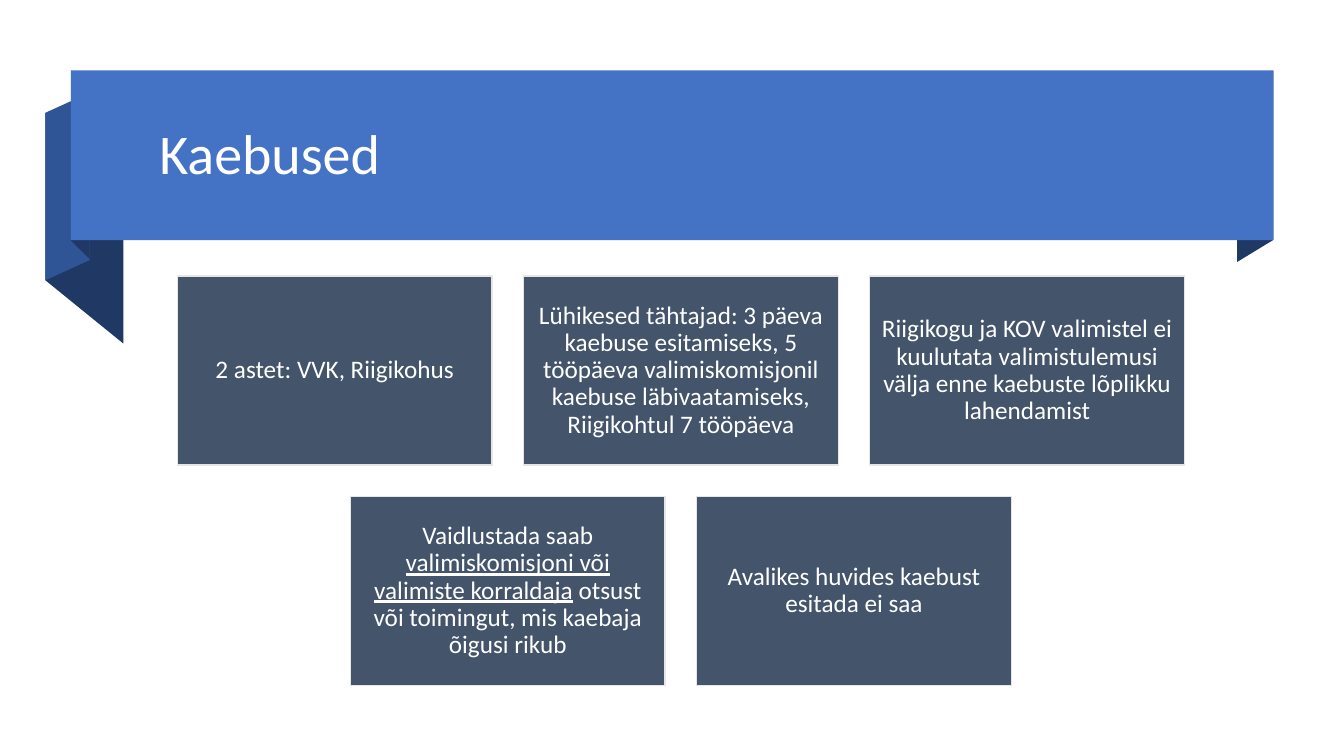
"""Build the slide about election complaints: a ribbon title above five cards."""
from dataclasses import dataclass

from pptx import Presentation
from pptx.dml.color import RGBColor
from pptx.enum.shapes import MSO_SHAPE
from pptx.enum.text import MSO_ANCHOR, MSO_AUTO_SIZE, PP_ALIGN
from pptx.shapes.autoshape import Shape
from pptx.slide import Slide
from pptx.text.text import TextFrame
from pptx.util import Pt


@dataclass(frozen=True)
class Theme:
    ribbon: RGBColor = RGBColor(0x44, 0x72, 0xC4)
    fold: RGBColor = RGBColor(0x2F, 0x55, 0x97)
    shade: RGBColor = RGBColor(0x20, 0x38, 0x64)
    card: RGBColor = RGBColor(0x44, 0x54, 0x6A)
    card_border: RGBColor = RGBColor(0xE7, 0xE6, 0xE6)
    text: RGBColor = RGBColor(0xFF, 0xFF, 0xFF)
    font: str = "Calibri"
    title_size: float = 40
    card_size: float = 18


@dataclass(frozen=True)
class RibbonFold:
    points: tuple[tuple[float, float], ...]
    color: RGBColor


@dataclass(frozen=True)
class TextRun:
    text: str
    underline: bool = False


@dataclass(frozen=True)
class Card:
    runs: tuple[TextRun, ...]


THEME = Theme()
SLIDE_WIDTH, SLIDE_HEIGHT = 960, 540
CARD_WIDTH, CARD_HEIGHT, CARD_GAP = 224.8, 134.9, 22.5
CARDS_CENTER, CARDS_TOP = 486.4, 197.2
CARD_INSET = 5.4

FOLDS = (
    RibbonFold(((909.6, 171.4), (883.6, 187.2), (883.6, 65.5), (909.6, 50.4)), THEME.shade),
    RibbonFold(((88.2, 245.5), (32.4, 200.2), (32.4, 80.6), (88.2, 126)), THEME.shade),
    RibbonFold(((64.1, 185.8), (32.4, 200.2), (32.4, 80.6), (64.1, 66.2)), THEME.fold),
    RibbonFold(((64.1, 185.0), (50.8, 172.1), (50.8, 50.4), (64.1, 64.1)), THEME.shade),
)

CARD_ROWS = (
    (
        Card((TextRun("2 astet: VVK, Riigikohus"),)),
        Card((TextRun(
            "Lühikesed tähtajad: 3 päeva kaebuse esitamiseks, 5 tööpäeva "
            "valimiskomisjonil kaebuse läbivaatamiseks, Riigikohtul 7 tööpäeva"
        ),)),
        Card((TextRun(
            "Riigikogu ja KOV valimistel ei kuulutata valimistulemusi välja "
            "enne kaebuste lõplikku lahendamist"
        ),)),
    ),
    (
        Card((
            TextRun("Vaidlustada saab "),
            TextRun("valimiskomisjoni või valimiste korraldaja", underline=True),
            TextRun(" otsust või toimingut, mis kaebaja õigusi rikub"),
        )),
        Card((TextRun("Avalikes huvides kaebust esitada ei saa"),)),
    ),
)


def fill_shape(shape: Shape, color: RGBColor) -> None:
    shape.shadow.inherit = False
    shape.fill.solid()
    shape.fill.fore_color.rgb = color
    shape.line.fill.background()


def write_text(
    frame: TextFrame, runs: tuple[TextRun, ...], size: float, alignment: PP_ALIGN
) -> None:
    frame.word_wrap = True
    frame.auto_size = MSO_AUTO_SIZE.NONE
    frame.vertical_anchor = MSO_ANCHOR.MIDDLE
    paragraph = frame.paragraphs[0]
    paragraph.alignment = alignment
    paragraph.line_spacing = 0.9
    for text_run in runs:
        run = paragraph.add_run()
        run.text = text_run.text
        run.font.name = THEME.font
        run.font.size = Pt(size)
        run.font.color.rgb = THEME.text
        if text_run.underline:
            run.font.underline = True


def draw_fold(slide: Slide, fold: RibbonFold) -> None:
    start, *others = [(Pt(x), Pt(y)) for x, y in fold.points]
    builder = slide.shapes.build_freeform(*start)
    builder.add_line_segments(others, close=True)
    fill_shape(builder.convert_to_shape(), fold.color)


def draw_ribbon(slide: Slide) -> None:
    for fold in FOLDS:
        draw_fold(slide, fold)
    band = slide.shapes.add_shape(
        MSO_SHAPE.RECTANGLE, Pt(50.6), Pt(50.2), Pt(859), Pt(121.4)
    )
    fill_shape(band, THEME.ribbon)


def place_title(slide: Slide, text: str) -> None:
    title = slide.shapes.title
    title.left, title.top, title.width, title.height = Pt(106.6), Pt(59.8), Pt(787.7), Pt(104.4)
    write_text(title.text_frame, (TextRun(text),), THEME.title_size, PP_ALIGN.LEFT)
    title.element.getparent().append(title.element)


def draw_card(slide: Slide, card: Card, left: float, top: float) -> None:
    shape = slide.shapes.add_shape(
        MSO_SHAPE.RECTANGLE, Pt(left), Pt(top), Pt(CARD_WIDTH), Pt(CARD_HEIGHT)
    )
    fill_shape(shape, THEME.card)
    shape.line.color.rgb = THEME.card_border
    shape.line.width = Pt(1)
    frame = shape.text_frame
    frame.margin_left = frame.margin_right = Pt(CARD_INSET)
    frame.margin_top = frame.margin_bottom = Pt(CARD_INSET)
    write_text(frame, card.runs, THEME.card_size, PP_ALIGN.CENTER)


def draw_cards(slide: Slide) -> None:
    for row_index, row in enumerate(CARD_ROWS):
        row_width = len(row) * (CARD_WIDTH + CARD_GAP) - CARD_GAP
        row_left = CARDS_CENTER - row_width / 2
        top = CARDS_TOP + row_index * (CARD_HEIGHT + CARD_GAP)
        for column, card in enumerate(row):
            draw_card(slide, card, row_left + column * (CARD_WIDTH + CARD_GAP), top)


def main() -> None:
    presentation = Presentation()
    presentation.slide_width = Pt(SLIDE_WIDTH)
    presentation.slide_height = Pt(SLIDE_HEIGHT)
    title_only = presentation.slide_layouts.get_by_name("Title Only")
    slide = presentation.slides.add_slide(title_only)
    draw_ribbon(slide)
    place_title(slide, "Kaebused")
    draw_cards(slide)
    presentation.save("out.pptx")


if __name__ == "__main__":
    main()
